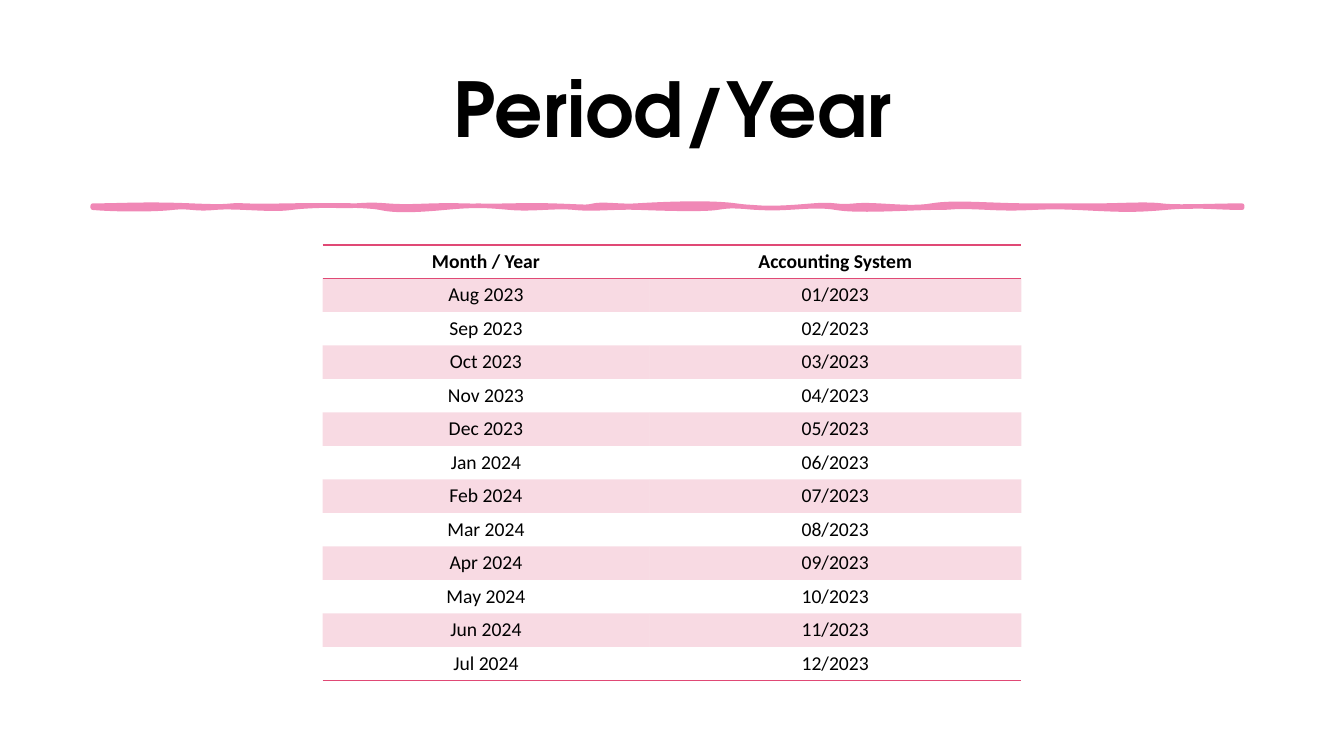
from lxml.etree import SubElement
from pptx import Presentation
from pptx.dml.color import RGBColor
from pptx.enum.text import MSO_ANCHOR, MSO_AUTO_SIZE, PP_ALIGN
from pptx.oxml.ns import qn
from pptx.util import Inches, Pt

BLACK = RGBColor(0x00, 0x00, 0x00)
PINK = RGBColor(0xF0, 0x88, 0xB6)
ROSE = RGBColor(0xE0, 0x49, 0x75)

SLIDE_W, SLIDE_H = Inches(13.33), Inches(7.5)
MARGIN = 0.92
NO_STYLE = "{2D5ABB26-0587-4C30-8999-92F81FD0307C}"

TITLE_FONT = {"name": "TeX Gyre Adventor", "size": Pt(54), "bold": True}
HEAD_FONT = {"name": "Calibri", "size": Pt(14), "bold": True}
BODY_FONT = {**HEAD_FONT, "bold": False}
CELL_FORMAT = {
    "vertical_anchor": MSO_ANCHOR.MIDDLE,
    "margin_left": Inches(0.08), "margin_right": Inches(0.08),
    "margin_top": Inches(0.04), "margin_bottom": Inches(0.04),
}

HEADERS = ("Month / Year", "Accounting System")
MONTHS = "Aug Sep Oct Nov Dec Jan Feb Mar Apr May Jun Jul".split()
COLUMN_WIDTHS = (3.24, 3.69)
ROW_HEIGHT = 4.32 / 13

TOP_Y, BOTTOM_Y = 2.04, 2.06
TOP_EDGE = [
    (1.19, 2.04, 1.44, 2.02, 1.9), (2.37, 2.06, 2.2, 2.03, 2.44),
    (2.67, 2.05, 3.03, 2.03, 3.31), (3.6, 2.05, 3.59, 2.02, 3.84),
    (4.1, 2.06, 4.23, 2.03, 4.6), (4.98, 2.05, 5.14, 2.03, 5.48),
    (5.81, 2.05, 5.81, 2.06, 5.89), (5.98, 2.02, 6.15, 2.05, 6.31),
    (6.47, 2.03, 7.01, 2.0, 7.3), (7.59, 2.08, 7.81, 2.06, 8.06),
    (8.31, 2.02, 8.27, 2.06, 8.48), (8.68, 2.02, 9.01, 2.08, 9.24),
    (9.47, 2.0, 9.82, 2.04, 10.23), (10.63, 2.04, 10.63, 2.04, 10.87),
    (11.12, 2.04, 11.36, 2.02, 11.52), (11.68, 2.06, 12.03, 2.04, 12.32),
]
RIGHT_END = [(12.32, 2.05, 12.32, 2.05, 12.32)]
BOTTOM_EDGE = [
    (12.05, 2.06, 11.89, 2.03, 11.56), (11.22, 2.09, 11.1, 2.08, 10.68),
    (10.27, 2.04, 10.23, 2.08, 9.81), (9.39, 2.04, 9.52, 2.06, 9.28),
    (9.04, 2.06, 8.51, 2.1, 8.29), (8.06, 2.02, 7.82, 2.08, 7.53),
    (7.24, 2.04, 7.25, 2.04, 7.11), (6.98, 2.08, 6.61, 2.07, 6.35),
    (6.09, 2.05, 5.9, 2.08, 5.7), (5.51, 2.04, 5.28, 2.08, 5.06),
    (4.83, 2.04, 4.73, 2.03, 4.41), (4.09, 2.09, 3.9, 2.09, 3.77),
    (3.63, 2.03, 3.1, 2.03, 2.89), (2.68, 2.09, 2.35, 2.04, 2.13),
    (1.92, 2.08, 1.89, 2.04, 1.71), (1.54, 2.08, 1.14, 2.08, MARGIN),
]


def apply(target, values):
    for name, value in values.items():
        setattr(target, name, value)


def write(tf, text, font):
    p = tf.paragraphs[0]
    p.alignment = PP_ALIGN.CENTER
    r = p.add_run()
    r.text = text
    apply(r.font, font)
    r.font.color.rgb = BLACK
    return p


def add_title(s, text):
    sp = s.shapes.title
    apply(sp, {"left": Inches(MARGIN), "top": Inches(0.4),
               "width": Inches(11.5), "height": Inches(1.45)})
    apply(sp.text_frame, {"vertical_anchor": MSO_ANCHOR.MIDDLE, "word_wrap": True,
                          "auto_size": MSO_AUTO_SIZE.NONE})
    write(sp.text_frame, text, TITLE_FONT).line_spacing = 0.9


def bend(segment, controls):
    segment.tag = qn("a:cubicBezTo")
    end = segment[0]
    for x, y in controls:
        pt = SubElement(segment, qn("a:pt"))
        pt.set("x", str(Inches(x) - Inches(MARGIN)))
        pt.set("y", str(Inches(y) - Inches(TOP_Y)))
    segment.append(end)


def add_brush_line(s):
    curves = TOP_EDGE + RIGHT_END + BOTTOM_EDGE
    ends = [(Inches(c[-1]), Inches(TOP_Y if i < len(TOP_EDGE) else BOTTOM_Y))
            for i, c in enumerate(curves)]
    outline = s.shapes.build_freeform(Inches(MARGIN), Inches(TOP_Y))
    outline.add_line_segments(ends, close=True)
    sp = outline.convert_to_shape()
    segments = list(sp._element.iter(qn("a:lnTo")))
    for segment, (x1, y1, x2, y2, _) in zip(segments, curves):
        bend(segment, ((x1, y1), (x2, y2)))
    sp.shadow.inherit = False
    sp.fill.solid()
    sp.fill.fore_color.rgb = PINK
    sp.line.color.rgb = PINK
    sp.line.width = Pt(3.25)
    SubElement(sp.line._get_or_add_ln(), qn("a:round"))


def add_border(cell, side):
    ln = SubElement(cell._tc.get_or_add_tcPr(), qn(f"a:{side}"), w=str(Pt(1)))
    fill = SubElement(ln, qn("a:solidFill"))
    SubElement(fill, qn("a:srgbClr"), val=str(ROSE))


def fill_cell(cell, shaded):
    if not shaded:
        cell.fill.background()
        return
    cell.fill.solid()
    cell.fill.fore_color.rgb = ROSE
    color = cell._tc.tcPr.find(qn("a:solidFill")).find(qn("a:srgbClr"))
    SubElement(color, qn("a:alpha"), val="20000")


def add_period_table(s, rows):
    frame = s.shapes.add_table(len(rows), len(COLUMN_WIDTHS), Inches(3.2), Inches(2.43),
                               Inches(sum(COLUMN_WIDTHS)), Inches(ROW_HEIGHT * len(rows)))
    table = frame.table
    table._tbl.tblPr.find(qn("a:tableStyleId")).text = NO_STYLE
    for column, width in zip(table.columns, COLUMN_WIDTHS):
        column.width = Inches(width)
    borders = {0: ("lnT", "lnB"), len(rows) - 1: ("lnB",)}
    for i, row in enumerate(rows):
        table.rows[i].height = Inches(ROW_HEIGHT)
        for j, text in enumerate(row):
            cell = table.cell(i, j)
            apply(cell, CELL_FORMAT)
            write(cell.text_frame, text, BODY_FONT if i else HEAD_FONT)
            for side in borders.get(i, ()):
                add_border(cell, side)
            fill_cell(cell, i % 2 == 1)


def main():
    prs = Presentation()
    prs.slide_width, prs.slide_height = SLIDE_W, SLIDE_H
    s = prs.slides.add_slide(prs.slide_layouts[5])
    add_title(s, "Period/Year")
    add_brush_line(s)
    periods = [(f"{month} {2023 if i <= 5 else 2024}", f"{i:02d}/2023")
               for i, month in enumerate(MONTHS, 1)]
    add_period_table(s, [HEADERS, *periods])
    prs.save("out.pptx")


if __name__ == "__main__":
    main()
